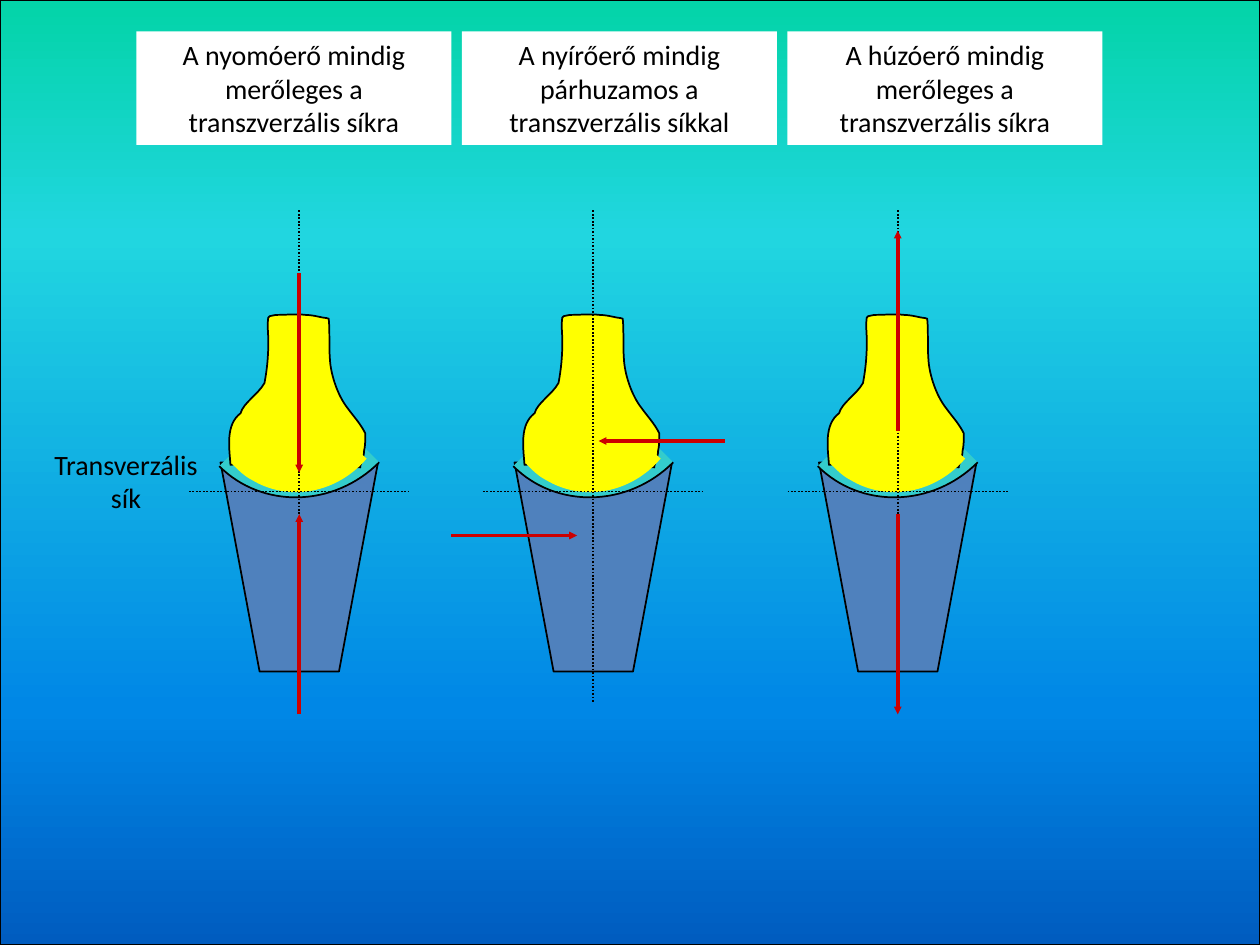
from copy import deepcopy
from dataclasses import dataclass
from math import cos, radians, sin

from lxml import etree
from pptx import Presentation
from pptx.dml.color import RGBColor
from pptx.enum import dml, shapes, text
from pptx.oxml import ns
from pptx.util import Inches, Pt

Point = tuple[float, float]
Segment = tuple[Point, ...]

BLACK, WHITE, YELLOW = "000000", "FFFFFF", "FFFF00"
BONE_BLUE, CARTILAGE_GREEN, RED = "4F81BD", "33CCCC", "CC0000"
SKY = [(0, "03D4A8"), (0.25, "21D6E0"), (0.75, "0087E6"), (1, "005CBF")]
AXIS_X = 1.5 + 1.75 / 2
MIDDLE_SHIFT, RIGHT_SHIFT = 7 / 3, 4.75
CAPTION_LEFT, CAPTION_STEP = 13 / 12, 31 / 12


@dataclass
class Contour:
    start: Point
    segments: list[Segment]
    filled: bool = True
    stroked: bool = True


@dataclass
class Part:
    box: tuple[float, float, float, float]
    rotation: float
    fill: str
    line: str | None
    contours: list[Contour]


@dataclass
class Arrow:
    start: Point
    end: Point


@dataclass
class Joint:
    shift: float
    grouped: bool
    caption: str
    arrows: list[Arrow]


def arc_with_sector(start: Point, arc: list[Segment], tip: Point,
                    stroked: bool) -> list[Contour]:
    return [Contour(start, arc, filled=False),
            Contour(start, arc + [(tip,)], stroked=stroked)]


TIBIA = Part((1.75, 3.67, 1.25, 1.66), 180, BONE_BLUE, BLACK, [
    Contour((1.75, 3.67), [((2.06, 5.33),), ((2.69, 5.33),), ((3, 3.67),)])])
CARTILAGE = Part((1.94, 3.23, 0.88, 0.92), 45, CARTILAGE_GREEN, BLACK, arc_with_sector(
    (3.01, 3.67), [((2.65, 4.03), (2.08, 4.04), (1.74, 3.7))], (2.39, 3.05), False))
FEMUR = Part((1.77, 2.49, 1.11, 1.26), 356.4, YELLOW, BLACK, [Contour((1.83, 3.69), [
    ((1.82, 3.55), (1.79, 3.37), (1.91, 3.28)),
    ((1.93, 3.2), (2.05, 3.13), (2.1, 3.04)),
    ((2.12, 2.93), (2.13, 2.83), (2.13, 2.71)),
    ((2.13, 2.65), (2.12, 2.58), (2.13, 2.52)),
    ((2.14, 2.5), (2.17, 2.51), (2.19, 2.5)),
    ((2.27, 2.5), (2.35, 2.49), (2.43, 2.5)),
    ((2.47, 2.5), (2.51, 2.51), (2.56, 2.52)),
    ((2.58, 2.52), (2.61, 2.53), (2.61, 2.53)),
    ((2.62, 2.64), (2.61, 2.75), (2.62, 2.87)),
    ((2.63, 2.98), (2.68, 3.14), (2.76, 3.24)),
    ((2.81, 3.31), (2.86, 3.36), (2.9, 3.44)),
    ((2.9, 3.49), (2.9, 3.54), (2.89, 3.58)),
    ((2.89, 3.61), (2.88, 3.64), (2.87, 3.67)),
    ((2.86, 3.68), (2.86, 3.71), (2.86, 3.71)),
    ((2.63, 3.7), (2.4, 3.7), (2.16, 3.68)),
    ((2.04, 3.65), (1.95, 3.68), (1.83, 3.69))])])
CONDYLE = Part((1.95, 3.24, 0.9, 0.75), 30.4, YELLOW, None, arc_with_sector(
    (2.91, 3.64), [((2.68, 3.91), (2.3, 3.99), (2, 3.81)),
                   ((1.94, 3.78), (1.89, 3.73), (1.84, 3.68))], (2.38, 3.17), True))

JOINTS = [
    Joint(0, False, "A nyomóerő mindig merőleges a transzverzális síkra",
          [Arrow((AXIS_X, 2.17), (AXIS_X, 3.75)), Arrow((AXIS_X, 5.67), (AXIS_X, 4.08))]),
    Joint(MIDDLE_SHIFT, True, "A nyírőerő mindig párhuzamos a transzverzális síkkal",
          [Arrow((5.75, 3.5), (4.75, 3.5)), Arrow((3.58, 4.25), (4.58, 4.25))]),
    Joint(RIGHT_SHIFT, True, "A húzóerő mindig merőleges a transzverzális síkra",
          [Arrow((AXIS_X + RIGHT_SHIFT, 3.42), (AXIS_X + RIGHT_SHIFT, 1.83)),
           Arrow((AXIS_X + RIGHT_SHIFT, 4.08), (AXIS_X + RIGHT_SHIFT, 5.67))]),
]


def color(value: str) -> RGBColor:
    return RGBColor.from_string(value)


def paint(shape, fill: str, line: str | None) -> None:
    shape.shadow.inherit = False
    shape.fill.solid()
    shape.fill.fore_color.rgb = color(fill)
    if line:
        shape.line.color.rgb = color(line)
        shape.line.width = Pt(1)
    else:
        shape.line.fill.background()


def add_step(outline, tag: str, points: Segment, part: Part) -> None:
    left, top, width, height = part.box
    angle = radians(part.rotation)
    step = etree.SubElement(outline, ns.qn(tag))
    for x, y in points:
        dx, dy = x - left - width / 2, y - top - height / 2
        local_x = width / 2 + dx * cos(angle) + dy * sin(angle)
        local_y = height / 2 - dx * sin(angle) + dy * cos(angle)
        etree.SubElement(step, ns.qn("a:pt"), x=str(Inches(local_x)), y=str(Inches(local_y)))


def draw_part(group, part: Part, shift: float) -> None:
    left, top, width, height = part.box
    x, y = Inches(left + shift), Inches(top)
    right, bottom = x + Inches(width), y + Inches(height)
    builder = group.shapes.build_freeform(x, y)
    builder.add_line_segments([(right, y), (right, bottom), (x, bottom)])
    shape = builder.convert_to_shape()
    outlines = shape._element.xpath(".//a:pathLst")[0]
    outlines.clear()
    for contour in part.contours:
        outline = etree.SubElement(outlines, ns.qn("a:path"),
                                   w=str(Inches(width)), h=str(Inches(height)))
        if not contour.stroked:
            outline.set("stroke", "0")
        add_step(outline, "a:moveTo", (contour.start,), part)
        for segment in contour.segments:
            tag = "a:lnTo" if len(segment) == 1 else "a:cubicBezTo"
            add_step(outline, tag, segment, part)
        if contour.filled:
            etree.SubElement(outline, ns.qn("a:close"))
        else:
            outline.set("fill", "none")
    shape.rotation = part.rotation
    paint(shape, part.fill, part.line)


def draw_line(parent, start: Point, end: Point, stroke: str, width: float):
    line = parent.shapes.add_connector(
        shapes.MSO_CONNECTOR.STRAIGHT, *map(Inches, start + end))
    line.line.color.rgb = color(stroke)
    line.line.width = Pt(width)
    etree.SubElement(line._element.spPr, ns.qn("a:effectLst"))
    return line


def draw_axis(parent, start: Point, end: Point) -> None:
    axis = draw_line(parent, start, end, BLACK, 1)
    axis.line.dash_style = dml.MSO_LINE.ROUND_DOT


def draw_arrow(page, arrow: Arrow) -> None:
    line = draw_line(page, arrow.start, arrow.end, RED, 2.25)
    etree.SubElement(line.line._get_or_add_ln(), ns.qn("a:tailEnd"),
                     type="triangle", w="sm", len="sm")


def write(box, content: str) -> None:
    frame = box.text_frame
    frame.text = content
    frame.word_wrap = True
    frame.auto_size = text.MSO_AUTO_SIZE.SHAPE_TO_FIT_TEXT
    frame.vertical_anchor = text.MSO_ANCHOR.TOP
    para = frame.paragraphs[0]
    para.alignment = text.PP_ALIGN.CENTER
    font = para.runs[0].font
    font.name = "Calibri"
    font.size = Pt(16)
    font.color.rgb = color(BLACK)


def draw_caption(page, left: float, content: str) -> None:
    box = page.shapes.add_shape(shapes.MSO_SHAPE.RECTANGLE, Inches(left),
                                Inches(0.25), Inches(2.5), Inches(0.9))
    paint(box, WHITE, None)
    write(box, content)


def draw_sky(page, width: int, height: int) -> None:
    sky = page.shapes.add_shape(shapes.MSO_SHAPE.RECTANGLE, 0, 0, width, height)
    paint(sky, WHITE, BLACK)
    sky.fill.gradient()
    sky.fill.gradient_angle = 270
    stop_list = sky._element.xpath(".//a:gsLst")[0]
    for stop in list(stop_list):
        stop_list.append(deepcopy(stop))
    for stop, (position, value) in zip(sky.fill.gradient_stops, SKY):
        stop.position = position
        stop.color.rgb = color(value)


def draw_joint(page, joint: Joint) -> None:
    shift = joint.shift
    lower = page.shapes.add_group_shape()
    upper = lower if joint.grouped else page.shapes.add_group_shape()
    for group, part in [(lower, TIBIA), (lower, CARTILAGE), (upper, FEMUR), (upper, CONDYLE)]:
        draw_part(group, part, shift)
    parent = lower if joint.grouped else page
    draw_axis(parent, (1.5 + shift, 3.9), (3.25 + shift, 3.9))
    draw_axis(parent, (AXIS_X + shift, 1.67), (AXIS_X + shift, 5.58))
    for arrow in joint.arrows:
        draw_arrow(page, arrow)


def main() -> None:
    deck = Presentation()
    deck.slide_width, deck.slide_height = Inches(10), Inches(7.5)
    page = deck.slides.add_slide(deck.slide_layouts[6])
    draw_sky(page, deck.slide_width, deck.slide_height)
    for index, joint in enumerate(JOINTS):
        draw_joint(page, joint)
        draw_caption(page, CAPTION_LEFT + index * CAPTION_STEP, joint.caption)
    label = page.shapes.add_textbox(Inches(0.25), Inches(3.5), Inches(1.5), Inches(0.64))
    write(label, "Transverzális sík")
    deck.save("out.pptx")


if __name__ == "__main__":
    main()
